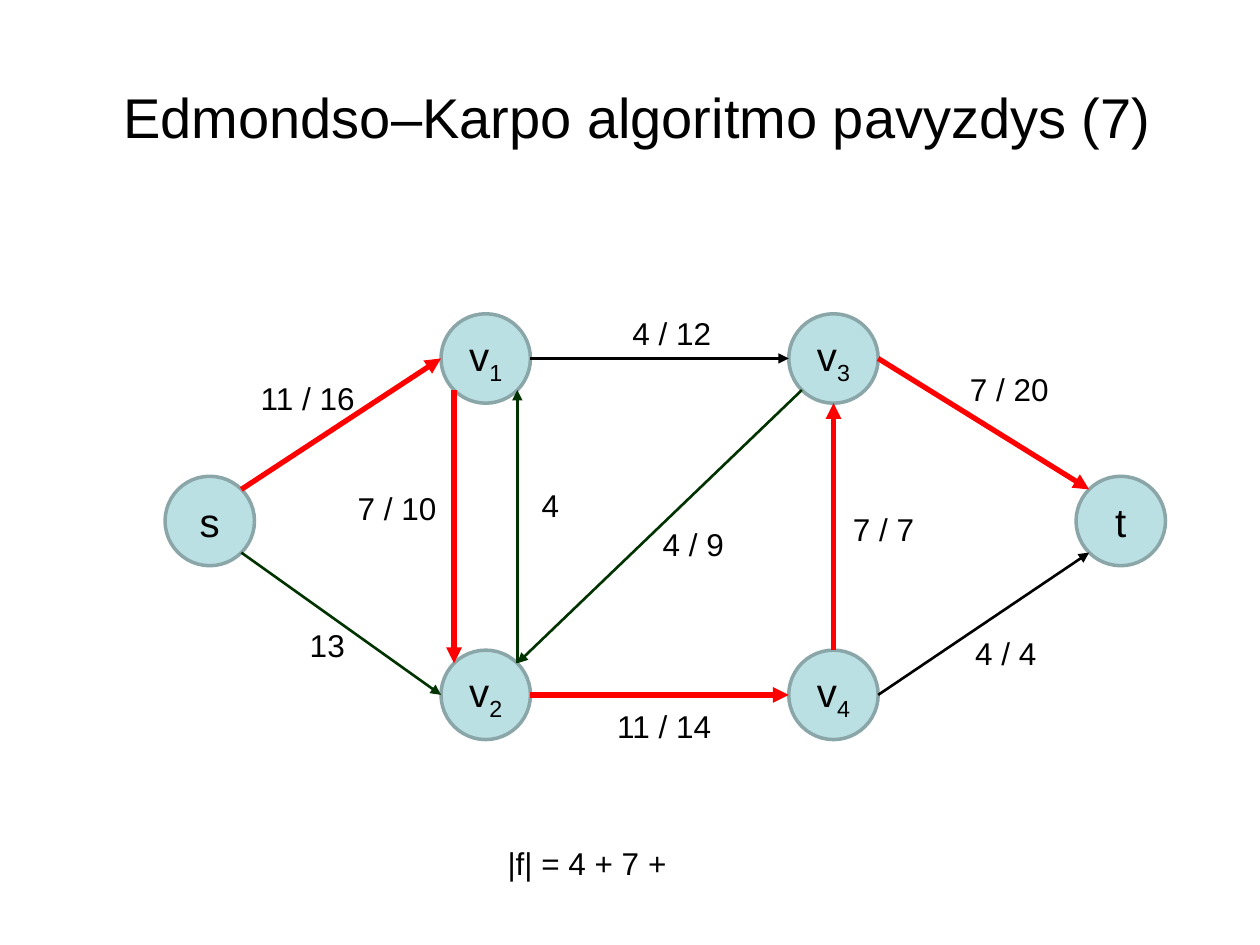
from math import sqrt

from pptx import Presentation
from pptx.dml.color import RGBColor
from pptx.enum.shapes import MSO_CONNECTOR as CONN, MSO_SHAPE as SHAPE
from pptx.enum.text import MSO_ANCHOR as ANCHOR, MSO_AUTO_SIZE as AUTO, PP_ALIGN as ALIGN
from pptx.oxml.ns import qn
from pptx.util import Inches, Pt
from lxml.etree import SubElement

DIAMETER = 0.71
RED, GREEN, BLACK = "FF0000", "003300", "000000"

# name: (left, top)
NODES = {
    "v1": (3.5, 2.49), "v3": (6.26, 2.49),
    "v2": (3.5, 5.16), "v4": (6.26, 5.16),
    "s": (1.31, 3.78), "t": (8.54, 3.78),
}

# (from, side, to, side, colour, width, label, label left, label top, label width)
EDGES = [
    ("s", "NE", "v1", "W", RED, 3, "11 / 16", 1.97, 2.96, 0.95),
    ("v1", "E", "v3", "W", BLACK, 1.5, "4 / 12", 4.92, 2.44, 0.83),
    ("s", "SE", "v2", "W", GREEN, 1.5, "13", 2.36, 4.92, 0.48),
    ("v2", "E", "v4", "W", RED, 3, "11 / 14", 4.8, 5.56, 0.95),
    ("v3", "SW", "v2", "NE", GREEN, 1.5, "4 / 9", 5.16, 4.12, 0.69),
    ("v1", "SW", "v2", "NW", RED, 3, "7 / 10", 2.74, 3.83, 0.83),
    ("v2", "NE", "v1", "SE", GREEN, 1.5, "4", 4.2, 3.81, 0.34),
    ("v4", "N", "v3", "S", RED, 3, "7 / 7", 6.67, 4, 0.69),
    ("v3", "E", "t", "NW", RED, 3, "7 / 20", 7.6, 2.89, 0.83),
    ("v4", "E", "t", "SW", BLACK, 1.5, "4 / 4", 7.64, 4.98, 0.69),
]


def rgb(value):
    return RGBColor.from_string(value)


def rim_point(name, side):
    """Point on a node's circle in a compass direction."""
    dx = ("E" in side) - ("W" in side)
    dy = ("S" in side) - ("N" in side)
    radius = DIAMETER / 2
    step = radius / sqrt(dx * dx + dy * dy)
    left, top = NODES[name]
    return left + radius + dx * step, top + radius + dy * step


class FlowSlide:
    FONT = "Arial"
    NODE_FILL, NODE_LINE = "BBE0E3", "8AA6A8"

    def __init__(self, prs):
        self.s = prs.slides.add_slide(prs.slide_layouts[6])

    def run(self, p, text, size):
        r = p.add_run()
        r.text = text
        for key, value in {"name": self.FONT, "size": Pt(size)}.items():
            setattr(r.font, key, value)
        r.font.color.rgb = rgb(BLACK)
        return r

    def text(self, text, left, top, width, height=0.4, size=18, align=ALIGN.LEFT, **frame):
        sp = self.s.shapes.add_textbox(*map(Inches, (left, top, width, height)))
        tf = sp.text_frame
        options = {"word_wrap": False, "auto_size": AUTO.SHAPE_TO_FIT_TEXT, **frame}
        for key, value in options.items():
            setattr(tf, key, value)
        p = tf.paragraphs[0]
        p.alignment = align
        self.run(p, text, size)

    def node(self, name):
        left, top = NODES[name]
        sp = self.s.shapes.add_shape(
            SHAPE.OVAL, *map(Inches, (left, top, DIAMETER, DIAMETER)))
        sp.shadow.inherit = False
        sp.fill.solid()
        sp.fill.fore_color.rgb = rgb(self.NODE_FILL)
        sp.line.color.rgb = rgb(self.NODE_LINE)
        sp.line.width = Pt(2)
        tf = sp.text_frame
        for key, value in {"word_wrap": False, "vertical_anchor": ANCHOR.MIDDLE}.items():
            setattr(tf, key, value)
        p = tf.paragraphs[0]
        p.alignment = ALIGN.CENTER
        self.run(p, name[0], 23)
        if name[1:]:
            r = self.run(p, name[1:], 23)
            r.font._element.set("baseline", "-25000")

    def arrow(self, start, end, colour, width):
        line = self.s.shapes.add_connector(CONN.STRAIGHT, *map(Inches, start + end))
        line.line.color.rgb = rgb(colour)
        line.line.width = Pt(width)
        SubElement(line.line._get_or_add_ln(), qn("a:tailEnd"), type="triangle")
        SubElement(line._element.spPr, qn("a:effectLst"))


def main():
    prs = Presentation()
    prs.slide_width, prs.slide_height = Inches(10), Inches(7.5)
    slide = FlowSlide(prs)
    slide.text("Edmondso–Karpo algoritmo pavyzdys (7)", 0.5, 0.3, 9, 1.25, 32,
               ALIGN.CENTER, word_wrap=True, auto_size=AUTO.NONE,
               vertical_anchor=ANCHOR.MIDDLE, margin_left=Inches(0.22))
    for name in NODES:
        slide.node(name)
    for tail, tail_side, head, head_side, colour, width, *label in EDGES:
        slide.arrow(rim_point(tail, tail_side), rim_point(head, head_side), colour, width)
        slide.text(*label)
    slide.text("|f| = 4 + 7 +", 3.93, 6.65, 1.47)
    prs.save("out.pptx")


if __name__ == "__main__":
    main()
